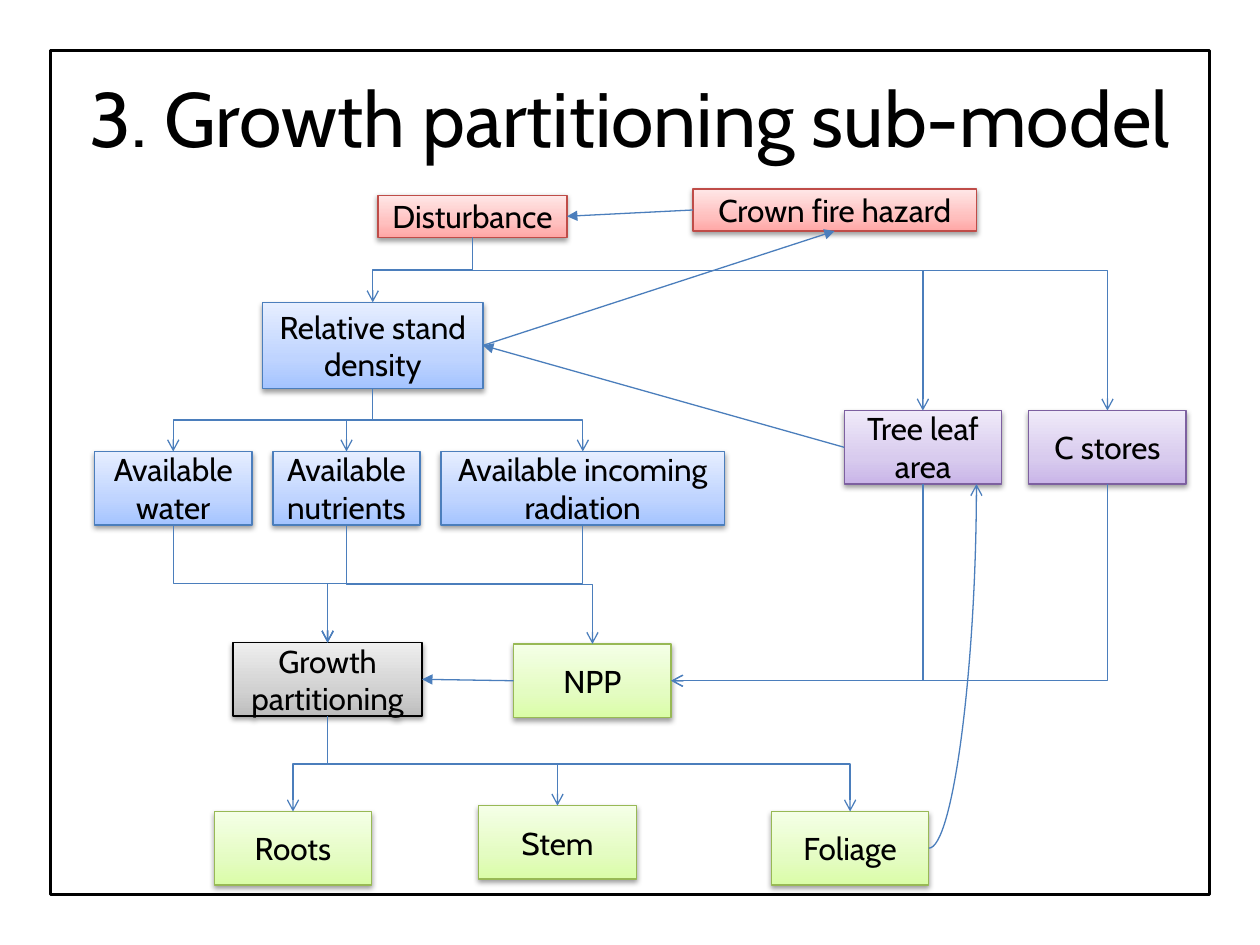
from dataclasses import dataclass

from lxml.etree import SubElement
from pptx import Presentation
from pptx.dml.color import RGBColor
from pptx.enum.shapes import MSO_CONNECTOR, MSO_SHAPE
from pptx.enum.text import MSO_ANCHOR, PP_ALIGN
from pptx.oxml.ns import qn
from pptx.util import Pt


@dataclass(frozen=True)
class Theme:
    font: str = "Cabin"
    title: int = 44
    label: int = 18
    ink: str = "000000"
    paper: str = "FFFFFF"
    wire: str = "4B7EBC"
    thin: float = 0.75
    # Line colour, then gradient stops from bottom to top
    red: tuple = ("BF4C48", "FFA6A5", "FFC0BF", "FFE7E7")
    blue: tuple = ("4B7EBC", "A4C4FF", "BFD4FF", "E6EEFF")
    green: tuple = ("98B955", "DAFDA7", "E4FCC2", "F5FFE7")
    grey: tuple = ("000000", "BDBDBD", "D1D1D1", "EEEEEE")
    violet: tuple = ("7D60A0", "C9B5E8", "D8CBEE", "F0EAF9")


def rgb(code):
    return RGBColor.from_string(code)


def add(parent, tag, **attrs):
    """Append a drawing element such as a:gs and return it."""
    return SubElement(parent, qn(tag), {k: str(v) for k, v in attrs.items()})


def write(frame, text, *, font, size, color, align=PP_ALIGN.CENTER):
    frame.word_wrap = True
    frame.vertical_anchor = MSO_ANCHOR.MIDDLE
    par = frame.paragraphs[0]
    par.alignment = align
    run = par.add_run()
    run.text = text
    run.font.name, run.font.size = font, Pt(size)
    run.font.color.rgb = rgb(color)


def edge(box, side):
    """Middle of one side of a box, in points."""
    x, y = box.left.pt, box.top.pt
    w, h = box.width.pt, box.height.pt
    return {"left": (x, y + h / 2), "right": (x + w, y + h / 2),
            "top": (x + w / 2, y), "bottom": (x + w / 2, y + h)}[side]


class Chart:
    def __init__(self, slide, theme):
        self.slide, self.theme = slide, theme

    def rect(self, x, y, w, h, line, width):
        shape = self.slide.shapes.add_shape(
            MSO_SHAPE.RECTANGLE, Pt(x), Pt(y), Pt(w), Pt(h))
        shape.shadow.inherit = False
        shape.line.color.rgb = rgb(line)
        shape.line.width = Pt(width)
        return shape

    def frame(self, x, y, w, h):
        shape = self.rect(x, y, w, h, self.theme.ink, 2)
        shape.fill.solid()
        shape.fill.fore_color.rgb = rgb(self.theme.paper)

    def title(self, text, x, y, w, h):
        box = self.slide.shapes.add_textbox(Pt(x), Pt(y), Pt(w), Pt(h))
        write(box.text_frame, text, font=self.theme.font,
              size=self.theme.title, color=self.theme.ink)

    def box(self, text, tint, x, y, w=90, h=42):
        line, *stops = tint
        shape = self.rect(x, y, w, h, line, self.theme.thin)
        shape.fill.gradient()
        shape.fill.gradient_angle = 90
        props = shape.element.spPr
        ramp = props.find(qn("a:gradFill")).find(qn("a:gsLst"))
        ramp.clear()
        for pos, code in zip((0, 35, 100), stops):
            add(add(ramp, "a:gs", pos=pos * 1000), "a:srgbClr", val=code)
        shade = add(props.find(qn("a:effectLst")), "a:outerShdw",
                    blurRad=Pt(3.1), dist=Pt(1.6), dir=5400000, rotWithShape=0)
        add(add(shade, "a:srgbClr", val=self.theme.ink), "a:alpha", val=38000)
        write(shape.text_frame, text, font=self.theme.font,
              size=self.theme.label, color=self.theme.ink)
        return shape

    def wire(self, kind, start, end, head):
        link = self.slide.shapes.add_connector(
            kind, *(Pt(v) for v in (*start, *end)))
        link.line.color.rgb = rgb(self.theme.wire)
        link.line.width = Pt(self.theme.thin)
        props = link.element.spPr
        add(props.find(qn("a:ln")), "a:tailEnd", type=head)
        add(props, "a:effectLst")
        return props

    def line(self, start, end):
        self.wire(MSO_CONNECTOR.STRAIGHT, start, end, "triangle")

    def curve(self, start, end):
        props = self.wire(MSO_CONNECTOR.CURVE, start, end, "arrow")
        props.find(qn("a:prstGeom")).set("prst", "curvedConnector2")

    def drop(self, start, end, rail=None):
        """Elbow that leaves downward and turns at height rail, or once only."""
        (x1, y1), (x2, y2) = start, end
        mid_x, mid_y = (x1 + x2) / 2, (y1 + y2) / 2
        half_w, half_h = (y2 - y1) / 2, abs(x2 - x1) / 2
        turn = 1 if x2 < x1 else -1
        props = self.wire(
            MSO_CONNECTOR.ELBOW,
            (mid_x - turn * half_w, mid_y - half_h),
            (mid_x + turn * half_w, mid_y + half_h), "arrow")
        props.find(qn("a:xfrm")).set("rot", str(turn % 4 * 5400000))
        geom = props.find(qn("a:prstGeom"))
        if rail is None:
            geom.set("prst", "bentConnector2")
        else:
            part = round((rail - y1) / (y2 - y1) * 100000)
            add(geom.find(qn("a:avLst")), "a:gd", name="adj1",
                fmla=f"val {part}")

    def fan(self, starts, ends, rail):
        """Join each start's bottom to each end's top over one rail."""
        for start in starts:
            for end in ends:
                self.drop(edge(start, "bottom"), edge(end, "top"), rail)


def main():
    deck = Presentation()
    deck.slide_width, deck.slide_height = Pt(720), Pt(540)
    theme = Theme()
    chart = Chart(deck.slides.add_slide(deck.slide_layouts[6]), theme)
    box = chart.box

    chart.frame(28.8, 28.8, 662.4, 482.4)
    chart.title("3. Growth partitioning sub-model", 36, 21.6, 648, 90)

    upset = box("Disturbance", theme.red, 216, 111.6, 108, 24)
    stand = box("Relative stand density", theme.blue, 150, 172.8, 126, 49.2)
    water = box("Available water", theme.blue, 54, 258)
    food = box("Available nutrients", theme.blue, 156, 258, 84)
    light = box("Available incoming radiation", theme.blue, 252, 258, 162)
    npp = box("NPP", theme.green, 293.5, 368)
    growth = box("Growth partitioning", theme.grey, 133.2, 367.2, 108)
    roots = box("Roots", theme.green, 122.4, 463.7)
    stem = box("Stem", theme.green, 273.6, 460.4)
    leaves = box("Foliage", theme.green, 440.8, 463.7)
    stores = box("C stores", theme.violet, 587.8, 234.6)
    area = box("Tree leaf area", theme.violet, 482.4, 234.6)
    fire = box("Crown fire hazard", theme.red, 396, 108, 162, 24)

    for start, out, end, into in (
            (npp, "left", growth, "right"), (fire, "left", upset, "right"),
            (stand, "right", fire, "bottom"), (area, "left", stand, "right")):
        chart.line(edge(start, out), edge(end, into))

    chart.fan([upset], [stand, area, stores], 154.4)
    chart.fan([stand], [water, light, food], 240)
    chart.fan([water, food, light], [growth], 333.6)
    chart.fan([food], [npp], 334)
    chart.fan([growth], [roots, stem, leaves], 436.5)
    for start in (area, stores):
        chart.drop(edge(start, "bottom"), edge(npp, "right"))
    chart.curve(edge(leaves, "right"), (558, edge(area, "bottom")[1]))

    deck.save("out.pptx")


if __name__ == "__main__":
    main()
